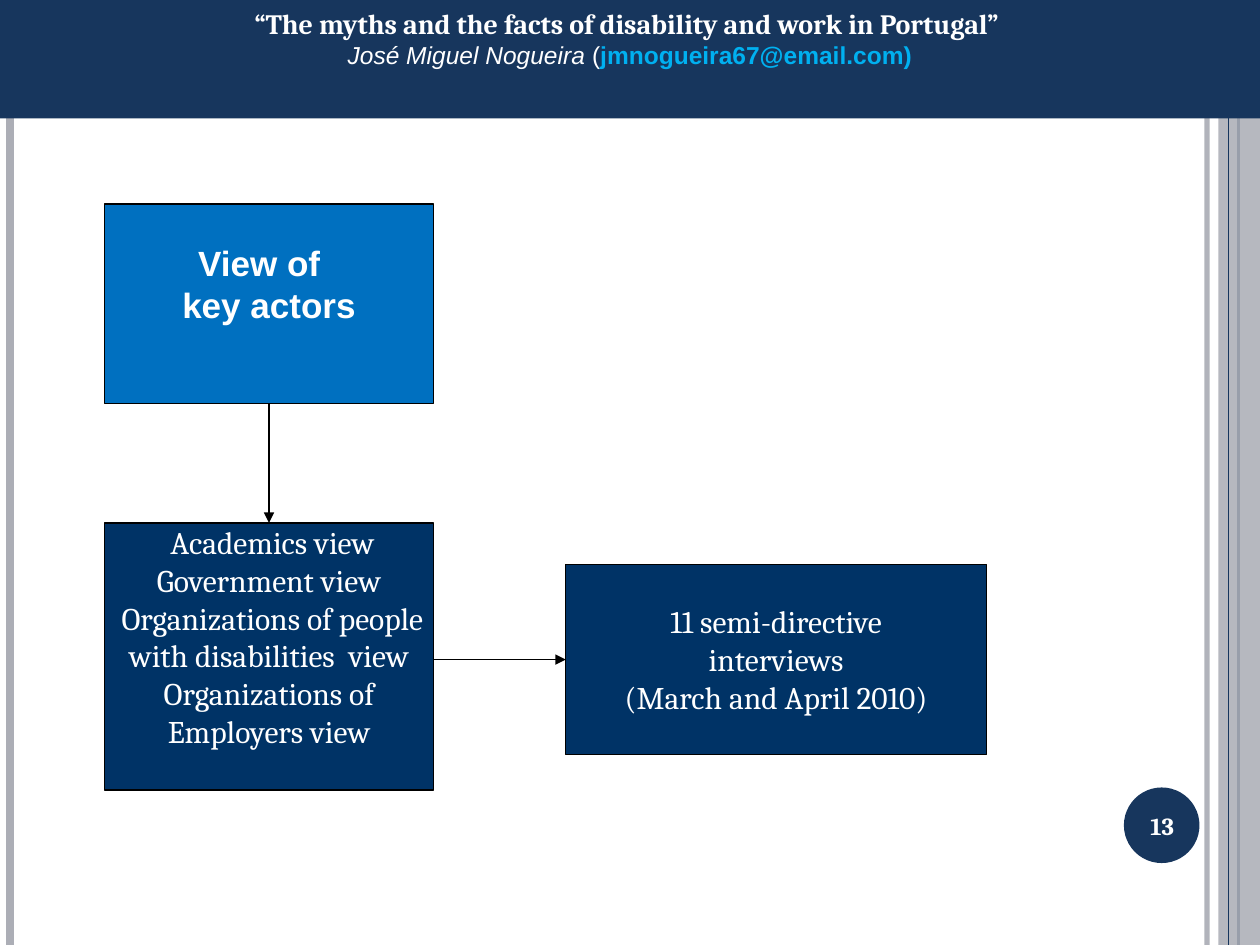
from lxml.etree import SubElement
from pptx import Presentation
from pptx.dml.color import RGBColor
from pptx.enum.shapes import MSO_CONNECTOR, MSO_SHAPE
from pptx.enum.text import MSO_ANCHOR, PP_ALIGN
from pptx.oxml.ns import qn
from pptx.util import Inches, Pt

NAVY = RGBColor(0x17, 0x36, 0x5D)
DEEP = RGBColor(0x00, 0x33, 0x66)
BLUE = RGBColor(0x00, 0x70, 0xC0)
SKY = RGBColor(0x00, 0xB0, 0xF0)
GREY = RGBColor(0xAC, 0xAE, 0xB6)
BLACK = RGBColor(0, 0, 0)
WHITE = RGBColor(0xFF, 0xFF, 0xFF)

W, H = 10, 7.5

# Content: a paragraph is a list of runs (text, size, font, colour, bold, italic)
HEADER = [
    [("“The myths and the facts of disability and work in Portugal” ", 16, "Cambria", WHITE, True, False)],
    [("José Miguel Nogueira ", 14, "Arial", WHITE, False, True),
     ("(", 14, "Arial", WHITE, False, False),
     ("jmnogueira67@email.com)", 14, "Arial", SKY, True, False)],
]
PAGE = [[("13", 14, "Cambria", WHITE, True, False)]]
ACTORS = ["View of  ", "key actors"]
VIEWS = [" Academics view", "Government view",
         " Organizations of people with disabilities  view",
         "Organizations of Employers view"]
INTERVIEWS = ["11 semi-directive", "interviews", "(March and April 2010)"]

# Stripes before and after the right band: x, colour, width, opacity
STRIPES_BELOW = [(9.58, GREY, 3, 93), (0.08, GREY, 4.5, 100), (9.83, NAVY, 1.5, 100)]
STRIPES_ABOVE = [(9.75, NAVY, 0.75, 100)]

prs = Presentation()
prs.slide_width, prs.slide_height = Inches(W), Inches(H)
s = prs.slides.add_slide(prs.slide_layouts[6])


def set_alpha(sp, percent):
    for color in sp._element.spPr.iter(qn("a:srgbClr")):
        SubElement(color, qn("a:alpha")).set("val", str(percent * 1000))


def add_line(x1, y1, x2, y2, color, width):
    c = s.shapes.add_connector(MSO_CONNECTOR.STRAIGHT, *map(Inches, (x1, y1, x2, y2)))
    c.line.color.rgb = color
    c.line.width = Pt(width)
    SubElement(c._element.spPr, qn("a:effectLst"))
    return c


def add_arrow(x1, y1, x2, y2):
    c = add_line(x1, y1, x2, y2, BLACK, 0.75)
    SubElement(c.line._get_or_add_ln(), qn("a:tailEnd")).set("type", "triangle")
    return c


def add_stripes(stripes):
    for x, color, width, alpha in stripes:
        c = add_line(x, 0, x, H, color, width)
        if alpha < 100:
            set_alpha(c, alpha)


def add_fill(kind, x, y, w, h, color, outlined=False):
    sp = s.shapes.add_shape(kind, *map(Inches, (x, y, w, h)))
    sp.shadow.inherit = False
    sp.fill.solid()
    sp.fill.fore_color.rgb = color
    if outlined:
        sp.line.color.rgb = BLACK
        sp.line.width = Pt(0.75)
    else:
        sp.line.fill.background()
    return sp


def write(sp, paragraphs, anchor=MSO_ANCHOR.TOP):
    tf = sp.text_frame
    tf.word_wrap = True
    tf.vertical_anchor = anchor
    for i, runs in enumerate(paragraphs):
        p = tf.paragraphs[0] if i == 0 else tf.add_paragraph()
        p.alignment = PP_ALIGN.CENTER
        for text, size, font, color, bold, italic in runs:
            r = p.add_run()
            r.text = text
            r.font.size, r.font.name = Pt(size), font
            r.font.bold, r.font.italic = bold, italic
            r.font.color.rgb = color


def add_box(x, y, w, h, color, lines, size, font, bold, top):
    sp = add_fill(MSO_SHAPE.RECTANGLE, x, y, w, h, color, outlined=True)
    tf = sp.text_frame
    tf.margin_left = tf.margin_right = tf.margin_bottom = 0
    tf.margin_top = Inches(top)
    write(sp, [[(line, size, font, WHITE, bold, False)] for line in lines])
    return sp


# Side decoration
add_stripes(STRIPES_BELOW)
band = add_fill(MSO_SHAPE.RECTANGLE, 9.67, 0, 0.33, H, GREY)
set_alpha(band, 87)
add_stripes(STRIPES_ABOVE)

# Page number
add_fill(MSO_SHAPE.OVAL, 8.92, 6.25, 0.6, 0.6, NAVY)
number = s.shapes.add_textbox(*map(Inches, (8.89, 6.27, 0.67, 0.57)))
write(number, PAGE, MSO_ANCHOR.MIDDLE)

# Flow boxes
actors = add_box(0.83, 1.62, 2.61, 1.58, BLUE, ACTORS, 20, "Arial", True, 0.3)
views = add_box(0.83, 4.15, 2.61, 2.12, DEEP, VIEWS, 18, "Cambria", False, 0)
interviews = add_box(4.49, 4.48, 3.34, 1.51, DEEP, INTERVIEWS, 18, "Cambria", False, 0.3)

# Arrows: the second one runs level with the middle of the interviews box
down = add_arrow(2.13, 3.2, 2.13, 4.15)
down.begin_connect(actors, 2)
down.end_connect(views, 0)
mid_y = 4.48 + 1.51 / 2
across = add_arrow(3.44, mid_y, 4.49, mid_y)
across.end_connect(interviews, 1)

# Header
header = add_fill(MSO_SHAPE.RECTANGLE, 0, 0, W, 0.94, NAVY)
write(header, HEADER)

prs.save("out.pptx")
